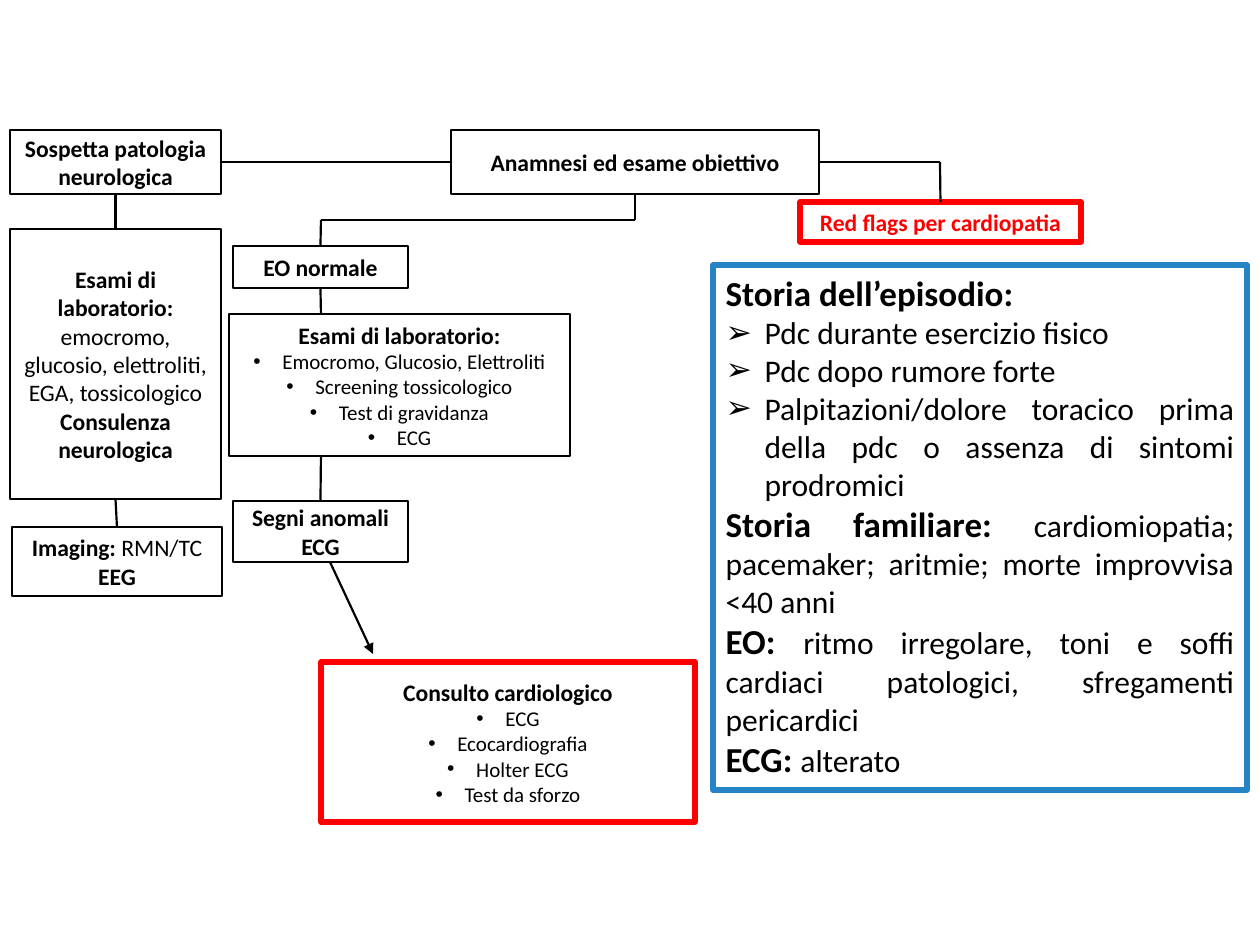
import collections

import lxml.etree
import pptx
import pptx.dml.color
import pptx.enum.shapes
import pptx.enum.text
import pptx.oxml.ns
import pptx.util

PX = 914400 / 126
BLACK = pptx.dml.color.RGBColor(0x00, 0x00, 0x00)
WHITE = pptx.dml.color.RGBColor(0xFF, 0xFF, 0xFF)
RED = pptx.dml.color.RGBColor(0xFF, 0x00, 0x00)
BLUE = pptx.dml.color.RGBColor(0x26, 0x83, 0xC6)
FONT = "Calibri"
HEAD = 13.5
ITEM = 12
PANEL_HEAD = 20
PANEL_ITEM = 18
TOP, LEFT, BOTTOM, RIGHT = range(4)
ALIGN = pptx.enum.text.PP_ALIGN
ANCHOR = pptx.enum.text.MSO_ANCHOR

Box = collections.namedtuple("Box", "left top width height")
Span = collections.namedtuple("Span", "text size bold", defaults=(HEAD, True))
Para = collections.namedtuple("Para", "spans bullet", defaults=(None,))


def emu(length):
    return pptx.util.Emu(round(length * PX))


def add_element(parent, tag, **attributes):
    return lxml.etree.SubElement(parent, pptx.oxml.ns.qn(tag), **attributes)


def inside(box, left, top, width, height):
    return Box(box.left + left, box.top + top, width, height)


def items(texts, size, bullet):
    return [Para([Span(text, size, False)], bullet) for text in texts]


def write_paras(shape, paras, color, align, indent):
    frame = shape.text_frame
    for index, content in enumerate(paras):
        para = frame.paragraphs[0] if index == 0 else frame.add_paragraph()
        para.alignment = align
        para.space_before = pptx.util.Pt(0)
        properties = para._p.get_or_add_pPr()
        margin = emu(indent) if content.bullet else 0
        properties.set("marL", str(margin))
        properties.set("indent", str(-margin))
        if content.bullet:
            add_element(properties, "a:buFont", typeface="Arial")
            add_element(properties, "a:buChar", char=content.bullet)
        else:
            add_element(properties, "a:buNone")
        for span in content.spans:
            run = para.add_run()
            run.text = span.text
            run.font.name = FONT
            run.font.size = pptx.util.Pt(span.size)
            run.font.bold = span.bold
            run.font.color.rgb = color


def fill_box(shape, box, paras, line=BLACK, weight=1.25, color=BLACK,
             align=ALIGN.CENTER, anchor=ANCHOR.MIDDLE, indent=29):
    shape.left, shape.top, shape.width, shape.height = map(emu, box)
    shape.fill.solid()
    shape.fill.fore_color.rgb = WHITE
    shape.line.color.rgb = line
    shape.line.width = pptx.util.Pt(weight)
    frame = shape.text_frame
    frame.word_wrap = True
    frame.auto_size = pptx.enum.text.MSO_AUTO_SIZE.NONE
    frame.vertical_anchor = anchor
    write_paras(shape, paras, color, align, indent)
    return shape


def add_box(slide, box, paras, **style):
    shape = slide.shapes.add_shape(
        pptx.enum.shapes.MSO_SHAPE.RECTANGLE, *map(emu, box))
    shape.shadow.inherit = False
    return fill_box(shape, box, paras, **style)


def add_line(slide, start, end, begin=None, finish=None, arrow=False):
    line = slide.shapes.add_connector(
        pptx.enum.shapes.MSO_CONNECTOR.STRAIGHT, *map(emu, start + end))
    line.line.color.rgb = BLACK
    line.line.width = pptx.util.Pt(1.25)
    if arrow:
        add_element(line.line._get_or_add_ln(), "a:tailEnd", type="triangle")
    add_element(line._element.spPr, "a:effectLst")
    if begin:
        line.begin_connect(*begin)
    if finish:
        line.end_connect(*finish)


def place_assessment(slide, box):
    return fill_box(slide.shapes.title, box,
                    [Para([Span("Anamnesi ed esame obiettivo")])])


def place_neurology(slide, box, assessment):
    suspicion = add_box(slide, inside(box, 0, 0, 211, 64),
                        [Para([Span("Sospetta patologia neurologica")])])
    tests = add_box(slide, inside(box, 0, 99, 211, 270), [
        Para([Span("Esami di laboratorio: "),
              Span("emocromo, glucosio, elettroliti, EGA, tossicologico",
                   bold=False)]),
        Para([Span("Consulenza neurologica")])])
    imaging = add_box(slide, inside(box, 2, 397, 210, 69), [
        Para([Span("Imaging: "), Span("RMN/TC", bold=False)]),
        Para([Span("EEG")])], weight=1.5, anchor=ANCHOR.TOP)
    imaging.fill.background()
    for upper, lower in ((suspicion, tests), (tests, imaging)):
        add_line(slide, (0, 0), (0, 0), (upper, BOTTOM), (lower, TOP))
    add_line(slide, (0, 0), (0, 0), (suspicion, RIGHT), (assessment, LEFT))


def place_normal_exam(slide, box, assessment):
    axis = box.left + 92
    branch = box.top + 26
    middle = box.left + 406
    normal = add_box(slide, inside(box, 4, 52, 175, 42),
                     [Para([Span("EO normale")])])
    add_box(slide, inside(box, 0, 120, 341, 142),
            [Para([Span("Esami di laboratorio:")])]
            + items(["Emocromo, Glucosio, Elettroliti",
                     "Screening tossicologico", "Test di gravidanza",
                     "ECG"], ITEM, "•"))
    abnormal = add_box(slide, inside(box, 4, 307, 175, 61),
                       [Para([Span("Segni anomali ECG")])])
    add_box(slide, inside(box, 92, 468, 374, 160),
            [Para([Span("Consulto cardiologico")])]
            + items(["ECG", "Ecocardiografia", "Holter ECG",
                     "Test da sforzo"], ITEM, "•"),
            line=RED, weight=3)
    add_line(slide, (middle, box.top), (middle, branch), (assessment, BOTTOM))
    add_line(slide, (axis, branch), (middle, branch))
    add_line(slide, (axis, branch), (axis, box.top + 52), None, (normal, TOP))
    add_line(slide, (axis, box.top + 94), (axis, box.top + 120),
             (normal, BOTTOM))
    add_line(slide, (axis, box.top + 262), (axis, box.top + 307), None,
             (abnormal, TOP))
    add_line(slide, (box.left + 101, box.top + 368),
             (box.left + 144, box.top + 460), arrow=True)


def place_red_flags(slide, box, assessment):
    flags = add_box(slide, inside(box, 87, 40, 281, 40),
                    [Para([Span("Red flags per cardiopatia")])],
                    line=RED, weight=3, color=RED)
    corner = (box.left + 227, box.top)
    add_line(slide, (box.left + 106, box.top), corner, (assessment, RIGHT))
    add_line(slide, corner, (corner[0], box.top + 40), None, (flags, TOP))
    paras = [Para([Span("Storia dell’episodio:", PANEL_HEAD)])]
    paras += items(["Pdc durante esercizio fisico", "Pdc dopo rumore forte",
                    "Palpitazioni/dolore toracico prima della pdc o assenza "
                    "di sintomi prodromici"], PANEL_ITEM, "➢")
    for heading, detail in (
            ("Storia familiare: ", "cardiomiopatia; pacemaker; aritmie; "
             "morte improvvisa <40 anni"),
            ("EO: ", "ritmo irregolare, toni e soffi cardiaci patologici, "
             "sfregamenti pericardici"),
            ("ECG: ", "alterato")):
        paras.append(Para([Span(heading, PANEL_HEAD),
                           Span(detail, PANEL_ITEM, False)]))
    fill_box(slide.placeholders[1], inside(box, 0, 103, 534, 525), paras,
             line=BLUE, weight=3, align=ALIGN.JUSTIFY, anchor=ANCHOR.TOP,
             indent=39)


def main():
    deck = pptx.Presentation()
    deck.slide_width, deck.slide_height = emu(1260), emu(945)
    slide = deck.slides.add_slide(deck.slide_layouts[1])
    assessment = place_assessment(slide, Box(451, 130, 368, 64))
    place_neurology(slide, Box(10, 130, 212, 466), assessment)
    place_normal_exam(slide, Box(229, 194, 466, 628), assessment)
    place_red_flags(slide, Box(713, 162, 534, 628), assessment)
    deck.save("out.pptx")


if __name__ == "__main__":
    main()
